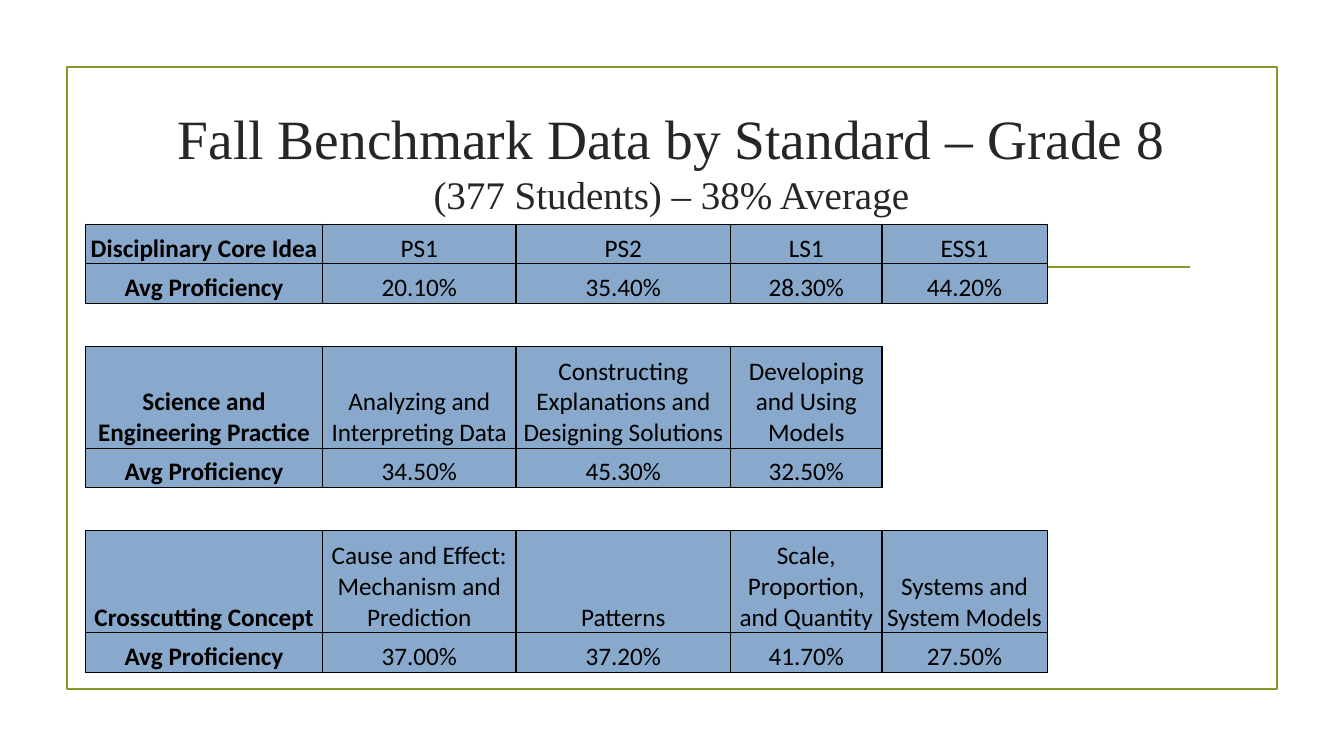
from pptx import Presentation
from pptx import util as u
from pptx.dml.color import RGBColor
from pptx.enum import shapes, text
from pptx.oxml import parse_xml
from pptx.oxml.ns import nsdecls
from lxml import etree

OLIVE = RGBColor(0x83, 0x99, 0x2A)
CHARCOAL = RGBColor(0x26, 0x26, 0x26)
BLACK = RGBColor(0, 0, 0)
STEEL = RGBColor(0x88, 0xA9, 0xCB)
NO_STYLE = "{2D5ABB26-0587-4C30-8999-92F81FD0307C}"

COLUMNS = [28.2, 23.04, 25.56, 18, 19.68, 25.32]
SHORT, GAP, TALL = 4.7, 5.12, 12.16
SECTIONS = [
    (SHORT, ["Disciplinary Core Idea", "PS1", "PS2", "LS1", "ESS1"],
     ["20.10%", "35.40%", "28.30%", "44.20%"]),
    (TALL, ["Science and Engineering Practice", "Analyzing and Interpreting Data",
            "Constructing Explanations and Designing Solutions",
            "Developing and Using Models"],
     ["34.50%", "45.30%", "32.50%"]),
    (TALL, ["Crosscutting Concept", "Cause and Effect: Mechanism and Prediction",
            "Patterns", "Scale, Proportion, and Quantity",
            "Systems and System Models"],
     ["37.00%", "37.20%", "41.70%", "27.50%"]),
]


def apply(target, values):
    for name, value in values.items():
        setattr(target, name, value)


class Deck:
    grid_columns, grid_rows = 160, 90
    title_font = {"name": "Times New Roman", "bold": False}
    cell_font = {"name": "Calibri", "size": u.Pt(18)}
    cell_format = {"margin_left": u.Inches(0.01), "margin_right": u.Inches(0.01),
                   "margin_top": u.Inches(0.01), "margin_bottom": 0,
                   "vertical_anchor": text.MSO_ANCHOR.BOTTOM}

    def __init__(self):
        self.prs = Presentation()
        apply(self.prs, {"slide_width": u.Inches(13.33), "slide_height": u.Inches(7.5)})
        self.s = self.prs.slides.add_slide(self.prs.slide_layouts[5])

    def x(self, columns):
        return round(self.prs.slide_width * columns / self.grid_columns)

    def y(self, rows):
        return round(self.prs.slide_height * rows / self.grid_rows)

    def box(self, left, top, width, height):
        return self.x(left), self.y(top), self.x(width), self.y(height)

    def stroke(self, sp):
        sp.line.color.rgb = OLIVE
        sp.line.width = u.Pt(1.25)

    def frame(self, *place):
        sp = self.s.shapes.add_shape(shapes.MSO_SHAPE.RECTANGLE, *self.box(*place))
        sp.shadow.inherit = False
        sp.fill.background()
        self.stroke(sp)

    def rule(self, left, right, row):
        sp = self.s.shapes.add_connector(
            shapes.MSO_CONNECTOR.STRAIGHT,
            self.x(left), self.y(row), self.x(right), self.y(row))
        self.stroke(sp)
        etree.SubElement(sp._element.spPr, "{http://schemas.openxmlformats.org/drawingml/2006/main}effectLst")

    def title(self, lines, *place):
        sp = self.s.shapes.title
        apply(sp, dict(zip(("left", "top", "width", "height"), self.box(*place))))
        tf = sp.text_frame
        apply(tf, {"word_wrap": True, "auto_size": text.MSO_AUTO_SIZE.NONE,
                   "vertical_anchor": text.MSO_ANCHOR.MIDDLE})
        p = tf.paragraphs[0]
        apply(p, {"alignment": text.PP_ALIGN.CENTER, "line_spacing": 1.0})
        for i, (words, size) in enumerate(lines):
            if i:
                p.add_line_break()
            r = p.add_run()
            r.text = words
            apply(r.font, {**self.title_font, "size": u.Pt(size)})
            r.font.color.rgb = CHARCOAL

    def cell(self, cell, words, bold):
        tcPr = cell._tc.get_or_add_tcPr()
        for side in "LRTB":
            tcPr.append(parse_xml(
                f'<a:ln{side} {nsdecls("a")} w="12700"><a:solidFill>'
                f'<a:srgbClr val="{BLACK}"/></a:solidFill></a:ln{side}>'))
        cell.fill.solid()
        cell.fill.fore_color.rgb = STEEL
        p = cell.text_frame.paragraphs[0]
        p.alignment = text.PP_ALIGN.CENTER
        r = p.add_run()
        r.text = words
        apply(r.font, {**self.cell_font, "bold": bold})
        r.font.color.rgb = BLACK

    def table(self, left, top, widths, heights, rows):
        place = self.box(left, top, sum(widths), sum(heights))
        sp = self.s.shapes.add_table(len(rows), len(widths), *place)
        table = sp.table
        apply(table, {"first_row": False, "horz_banding": False})
        table._tbl.tblPr.find("{*}tableStyleId").text = NO_STYLE
        for column, width in zip(table.columns, widths):
            column.width = self.x(width)
        for row, height, entries in zip(table.rows, heights, rows):
            row.height = self.y(height)
            for i, cell in enumerate(row.cells):
                apply(cell, self.cell_format)
                if i < len(entries):
                    self.cell(cell, entries[i], i == 0)
                else:
                    cell.fill.background()


def main():
    deck = Deck()
    deck.frame(8, 8, 144, 74)
    deck.rule(18.36, 141.72, 31.8)
    deck.title([("Fall Benchmark Data by Standard – Grade 8", 39.6),
                ("(377 Students) – 38% Average", 27.9)], 16.92, 10.5, 126, 17.16)
    rows, heights = [], []
    for height, headings, scores in SECTIONS:
        if rows:
            rows.append([])
            heights.append(GAP)
        rows += [headings, ["Avg Proficiency", *scores]]
        heights += [height, SHORT]
    deck.table(10.2, 26.7, COLUMNS, heights, rows)
    deck.prs.save("out.pptx")


if __name__ == "__main__":
    main()
